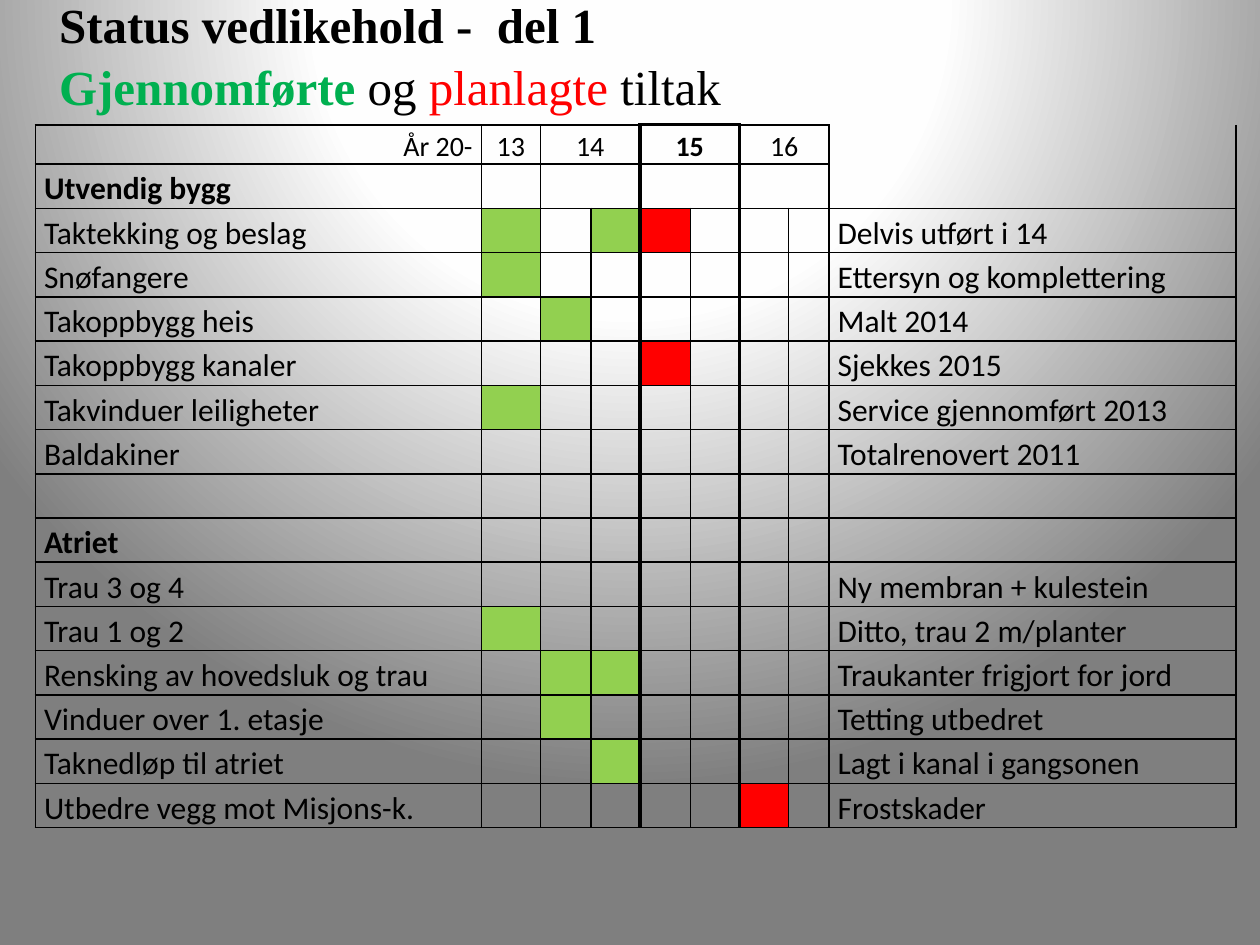
from dataclasses import dataclass

from pptx import Presentation, util as u
from pptx.dml.color import RGBColor
from pptx.enum import text
from pptx.oxml import parse_xml
from pptx.oxml.ns import nsdecls, qn


@dataclass(frozen=True)
class Theme:
    """Colours, fonts and sizes of the slide."""
    ink: str = "000000"
    done: str = "92D050"
    planned: str = "FF0000"
    done_word: str = "00B050"
    title_font: str = "Times New Roman"
    table_font: str = "Calibri"
    title_size: int = 28
    header_size: int = 16
    body_size: int = 18
    thin: float = 1
    thick: float = 2.25


THEME = Theme()
BACKDROP = ((0, "FFFFFF"), (40, "FEFEFE"), (100, "7F7F7F"))
NO_GRID_STYLE = "{2D5ABB26-0587-4C30-8999-92F81FD0307C}"
COLUMN_WIDTHS = (3.54, 0.47, 0.4, 0.39, 0.4, 0.39, 0.39, 0.32, 3.23)
HEADER_HEIGHT, ROW_HEIGHT = 0.31, 0.35
NOTE_COLUMN = 8
YEARS = {1: "13", 2: "14", 4: "15", 6: "16"}
CURRENT_YEAR = 4
SECTIONS = ("Utvendig bygg", "Atriet")
MEASURES = (
    ("Utvendig bygg", {}, ""),
    ("Taktekking og beslag", {1: THEME.done, 3: THEME.done, 4: THEME.planned}, "Delvis utført i 14"),
    ("Snøfangere", {1: THEME.done}, "Ettersyn og komplettering"),
    ("Takoppbygg heis", {2: THEME.done}, "Malt 2014"),
    ("Takoppbygg kanaler", {4: THEME.planned}, "Sjekkes 2015"),
    ("Takvinduer leiligheter", {1: THEME.done}, "Service gjennomført 2013"),
    ("Baldakiner", {}, "Totalrenovert 2011"),
    ("", {}, ""),
    ("Atriet", {}, ""),
    ("Trau 3 og 4", {}, "Ny membran + kulestein"),
    ("Trau 1 og 2", {1: THEME.done}, "Ditto, trau 2 m/planter"),
    ("Rensking av hovedsluk og trau", {2: THEME.done, 3: THEME.done}, "Traukanter frigjort for jord"),
    ("Vinduer over 1. etasje", {2: THEME.done}, "Tetting utbedret"),
    ("Taknedløp til atriet", {3: THEME.done}, "Lagt i kanal i gangsonen"),
    ("Utbedre vegg mot Misjons-k.", {6: THEME.planned}, "Frostskader"),
)
TITLE_LINES = (
    (("Status vedlikehold -  del 1", THEME.ink, True),),
    (("Gjennomførte", THEME.done_word, True), (" og ", THEME.ink, False),
     ("planlagte ", THEME.planned, False), ("tiltak", THEME.ink, False)),
)


def paint_background(slide):
    """Fill the background with a circular gradient."""
    slide.background.fill.solid()
    solid = next(slide._element.iter(qn("a:solidFill")))
    stops = "".join(f'<a:gs pos="{pos * 1000}"><a:srgbClr val="{color}"/></a:gs>' for pos, color in BACKDROP)
    solid.getparent().replace(solid, parse_xml(
        f'<a:gradFill {nsdecls("a")} rotWithShape="1"><a:gsLst>{stops}</a:gsLst>'
        '<a:path path="circle"><a:fillToRect l="50000" t="-80000" r="50000" b="180000"/>'
        '</a:path></a:gradFill>'))


def add_title(slide, left, top, width, height):
    """Place the two-line heading in the given box."""
    frame = slide.shapes.add_textbox(*map(u.Inches, (left, top, width, height))).text_frame
    frame.word_wrap = True
    frame.vertical_anchor = text.MSO_ANCHOR.MIDDLE
    frame.margin_left, frame.margin_bottom = u.Inches(0.59), u.Inches(0.29)
    for index, pieces in enumerate(TITLE_LINES):
        line = frame.add_paragraph() if index else frame.paragraphs[0]
        line.space_before = u.Pt(1.5 if index else 0)
        line.font.name, line.font.size = THEME.title_font, u.Pt(THEME.title_size)
        for words, color, bold in pieces:
            run = line.add_run()
            run.text, run.font.bold = words, bold
            run.font.color.rgb = RGBColor.from_string(color)


def cell_edges(row, col):
    """Return the border width of each side that is drawn on a cell."""
    if col == NOTE_COLUMN and row < 2:
        return {"L": THEME.thin, "B": THEME.thin} if row else {"L": THEME.thin}
    current = col in (CURRENT_YEAR, CURRENT_YEAR + 1)
    return {
        "L": THEME.thick if col in (CURRENT_YEAR, CURRENT_YEAR + 2) else THEME.thin,
        "R": THEME.thick if col in (CURRENT_YEAR - 1, CURRENT_YEAR + 1) else THEME.thin,
        "T": THEME.thick if current and row == 0 else THEME.thin,
        "B": THEME.thin,
    }


def style_cell(cell, edges, fill):
    """Set the margins, borders and fill of a cell."""
    cell.margin_left = cell.margin_right = u.Inches(0.07)
    cell.margin_top = cell.margin_bottom = 0
    properties = cell._tc.get_or_add_tcPr()
    for side, width in edges.items():
        properties.append(parse_xml(
            f'<a:ln{side} {nsdecls("a")} w="{u.Pt(width)}"><a:solidFill>'
            f'<a:srgbClr val="{THEME.ink}"/></a:solidFill></a:ln{side}>'))
    if fill:
        cell.fill.solid()
        cell.fill.fore_color.rgb = RGBColor.from_string(fill)
    else:
        cell.fill.background()


def write_cell(cell, words, size, bold=False, align=text.PP_ALIGN.LEFT):
    """Write one line of text in a cell."""
    cell.text = words
    line = cell.text_frame.paragraphs[0]
    line.alignment, line.line_spacing = align, 1.15
    line.font.name, line.font.size, line.font.bold = THEME.table_font, u.Pt(size), bold
    line.font.color.rgb = RGBColor.from_string(THEME.ink)


def add_schedule(slide, left, top, width, height):
    """Place the maintenance schedule in the given box."""
    frame = slide.shapes.add_table(len(MEASURES) + 1, len(COLUMN_WIDTHS),
                                   *map(u.Inches, (left, top, width, height)))
    table = frame.table
    table.first_row = table.horz_banding = False
    next(table._tbl.iter(qn("a:tableStyleId"))).text = NO_GRID_STYLE
    for column, column_width in zip(table.columns, COLUMN_WIDTHS):
        column.width = u.Inches(column_width)
    for row, line in enumerate(table.rows):
        line.height = u.Inches(ROW_HEIGHT if row else HEADER_HEIGHT)
        marks = MEASURES[row - 1][1] if row else {}
        for col in range(len(COLUMN_WIDTHS)):
            edges = cell_edges(row, col)
            if row < 2 and col in (2, 4, 6):
                edges["R"] = cell_edges(row, col + 1)["R"]
            style_cell(table.cell(row, col), edges, marks.get(col))
    for row in range(2):
        for col in (2, 4, 6):
            table.cell(row, col).merge(table.cell(row, col + 1))
    write_cell(table.cell(0, 0), "År 20-", THEME.header_size, align=text.PP_ALIGN.RIGHT)
    for col, year in YEARS.items():
        write_cell(table.cell(0, col), year, THEME.header_size, col == CURRENT_YEAR, text.PP_ALIGN.CENTER)
    for row, (measure, _, note) in enumerate(MEASURES, 1):
        for col, words in ((0, measure), (NOTE_COLUMN, note)):
            if words:
                write_cell(table.cell(row, col), words, THEME.body_size, words in SECTIONS)


def main():
    """Build and save the slide."""
    deck = Presentation()
    deck.slide_width, deck.slide_height = u.Inches(10), u.Inches(7.5)
    slide = deck.slides.add_slide(deck.slide_layouts[6])
    paint_background(slide)
    add_schedule(slide, 0.28, 0.99, 9.53, 5.56)
    add_title(slide, -0.12, -0.12, 8.43, 1.35)
    deck.save("out.pptx")


if __name__ == "__main__":
    main()
